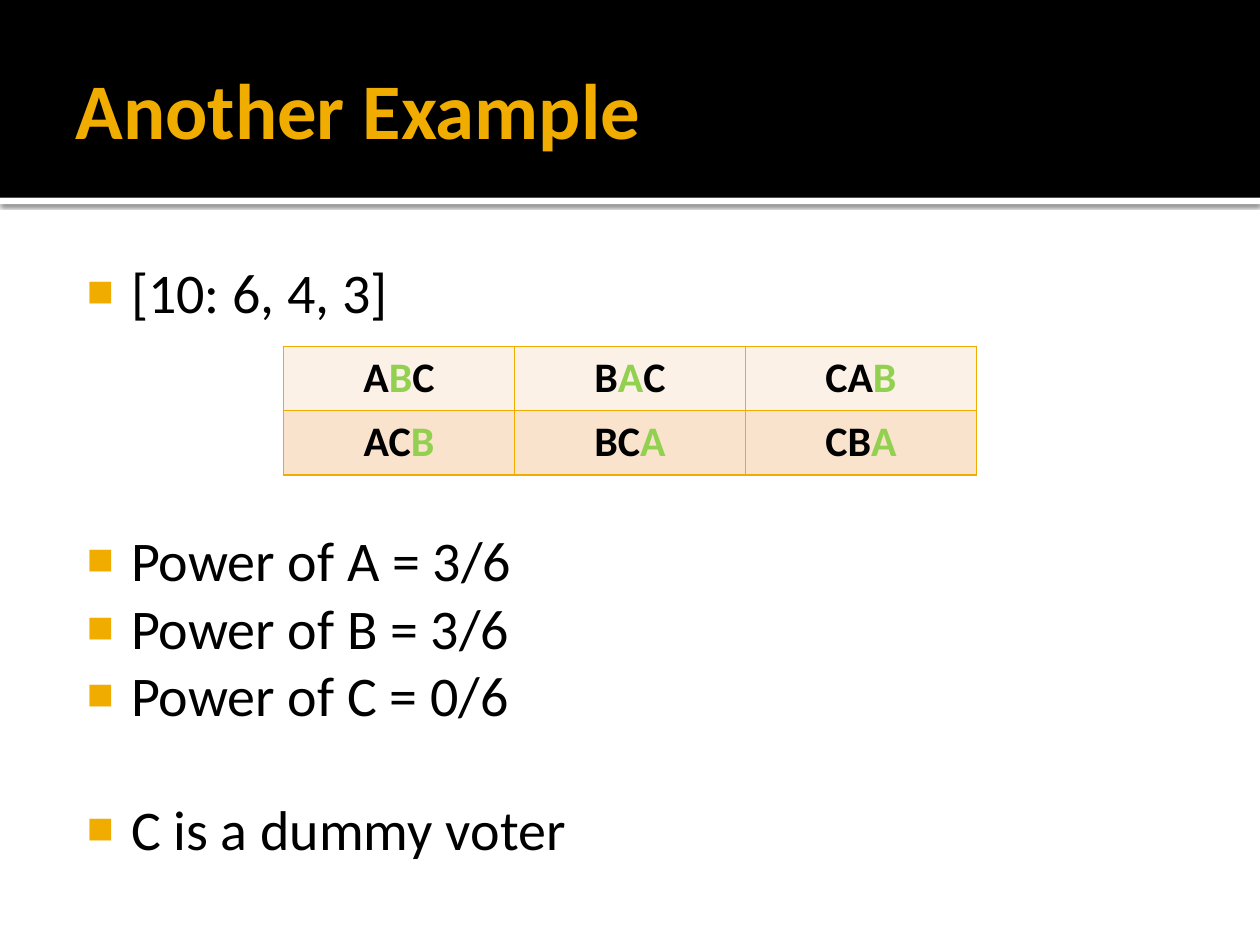
from dataclasses import dataclass
from lxml.etree import SubElement
from pptx import Presentation
from pptx.dml.color import RGBColor
from pptx.enum.shapes import MSO_SHAPE as Preset
from pptx.enum.text import MSO_ANCHOR as Anchor, MSO_AUTO_SIZE as AutoSize, PP_ALIGN as Align
from pptx.oxml.ns import qn
from pptx.util import Inches, Pt

TITLE = "Another Example"
BULLETS = [
    ("[10: 6, 4, 3]", 0),
    ("Power of A = 3/6", 3),
    ("Power of B = 3/6", 0),
    ("Power of C = 0/6", 0),
    ("C is a dummy voter", 1),
]
ORDERS = [
    [("ABC", "B"), ("BAC", "A"), ("CAB", "B")],
    [("ACB", "B"), ("BCA", "A"), ("CBA", "A")],
]


@dataclass(frozen=True)
class Theme:
    font: str = "Calibri"
    accent: str = "F0AD00"
    pivotal: str = "92D050"
    dark: str = "000000"
    light: str = "FFFFFF"
    rows: tuple = ("FCF1E7", "F9E3CC")
    title_size: float = 45
    body_size: float = 32
    line_pitch: float = 38.4
    table_size: float = 24


THEME = Theme()
WIDTH, HEIGHT = 10, 7.5
MARGIN = WIDTH / 20
BAND_HEIGHT = 1.57
TABLE_WIDTH, TABLE_TOP, ROW_HEIGHT = 5.5, 2.75, 0.51


def add_run(paragraph, text, size, color, bold=False):
    run = paragraph.add_run()
    run.text = text
    run.font.name = THEME.font
    run.font.size = Pt(size)
    run.font.bold = bold
    run.font.color.rgb = RGBColor.from_string(color)


def add_color(parent, color):
    SubElement(parent, qn("a:srgbClr"), val=color)


def add_band(slide, top, height, color):
    band = slide.shapes.add_shape(
        Preset.RECTANGLE, 0, Inches(top), Inches(WIDTH), Inches(height))
    band.shadow.inherit = False
    band.fill.solid()
    band.fill.fore_color.rgb = RGBColor.from_string(color)
    band.line.fill.background()
    return band


def add_shadow(shape):
    effects = shape._element.spPr.find(qn("a:effectLst"))
    shadow = SubElement(effects, qn("a:outerShdw"), blurRad=str(Pt(2.5)),
                        dist=str(Pt(0.8)), dir="5400000", rotWithShape="0")
    color = SubElement(shadow, qn("a:srgbClr"), val=THEME.dark)
    SubElement(color, qn("a:alpha"), val="60000")


def place(shape, top, height, insets, anchor):
    shape.left, shape.top = Inches(MARGIN), Inches(top)
    shape.width, shape.height = Inches(WIDTH - 2 * MARGIN), Inches(height)
    frame = shape.text_frame
    frame.word_wrap = True
    frame.auto_size = AutoSize.NONE
    frame.vertical_anchor = anchor
    (frame.margin_left, frame.margin_top,
     frame.margin_right, frame.margin_bottom) = map(Inches, insets)
    return frame


def set_bullet(paragraph):
    properties = paragraph._p.get_or_add_pPr()
    properties.set("marL", str(Inches(0.48)))
    properties.set("indent", str(Inches(-0.35)))
    add_color(SubElement(properties, qn("a:buClr")), THEME.accent)
    SubElement(properties, qn("a:buSzPct"), val="80000")
    SubElement(properties, qn("a:buChar"), char="■")


def fill_body(frame):
    for index, (text, skipped_lines) in enumerate(BULLETS):
        paragraph = frame.add_paragraph() if index else frame.paragraphs[0]
        paragraph.alignment = Align.LEFT
        paragraph.line_spacing = Pt(THEME.line_pitch)
        paragraph.space_before = Pt(skipped_lines * THEME.line_pitch)
        set_bullet(paragraph)
        add_run(paragraph, text, THEME.body_size, THEME.dark)


def style_cell(cell, fill):
    properties = cell._tc.get_or_add_tcPr()
    for side in ("lnL", "lnR", "lnT", "lnB"):
        border = SubElement(properties, qn(f"a:{side}"), w=str(Pt(1)))
        add_color(SubElement(border, qn("a:solidFill")), THEME.accent)
    cell.fill.solid()
    cell.fill.fore_color.rgb = RGBColor.from_string(fill)


def add_orders(slide):
    rows, columns = len(ORDERS), len(ORDERS[0])
    table = slide.shapes.add_table(
        rows, columns, Inches((WIDTH - TABLE_WIDTH) / 2), Inches(TABLE_TOP),
        Inches(TABLE_WIDTH), Inches(rows * ROW_HEIGHT)).table
    table.first_row = table.horz_banding = False
    for row, orders in enumerate(ORDERS):
        for column, (order, pivot) in enumerate(orders):
            cell = table.cell(row, column)
            style_cell(cell, THEME.rows[row])
            paragraph = cell.text_frame.paragraphs[0]
            paragraph.alignment = Align.CENTER
            before, after = order.split(pivot)
            for text, color in ((before, THEME.dark), (pivot, THEME.pivotal),
                                (after, THEME.dark)):
                if text:
                    add_run(paragraph, text, THEME.table_size, color, bold=True)


def main():
    presentation = Presentation()
    presentation.slide_width, presentation.slide_height = Inches(WIDTH), Inches(HEIGHT)
    slide = presentation.slides.add_slide(presentation.slide_layouts[1])
    title, body = slide.placeholders

    stripe = add_band(slide, BAND_HEIGHT, 0.05, THEME.light)
    add_shadow(stripe)
    header = add_band(slide, 0, BAND_HEIGHT, THEME.dark)
    for band in (stripe, header):
        title._element.addprevious(band._element)

    heading = place(title, 0.17, 1.37, (0.1, 0.05, 0.05, 0.05), Anchor.MIDDLE).paragraphs[0]
    heading.alignment = Align.LEFT
    add_run(heading, TITLE, THEME.title_size, THEME.accent, bold=True)
    fill_body(place(body, 1.94, 4.73, (0.06, 0.1, 0.1, 0.05), Anchor.TOP))
    add_orders(slide)
    presentation.save("out.pptx")


if __name__ == "__main__":
    main()
